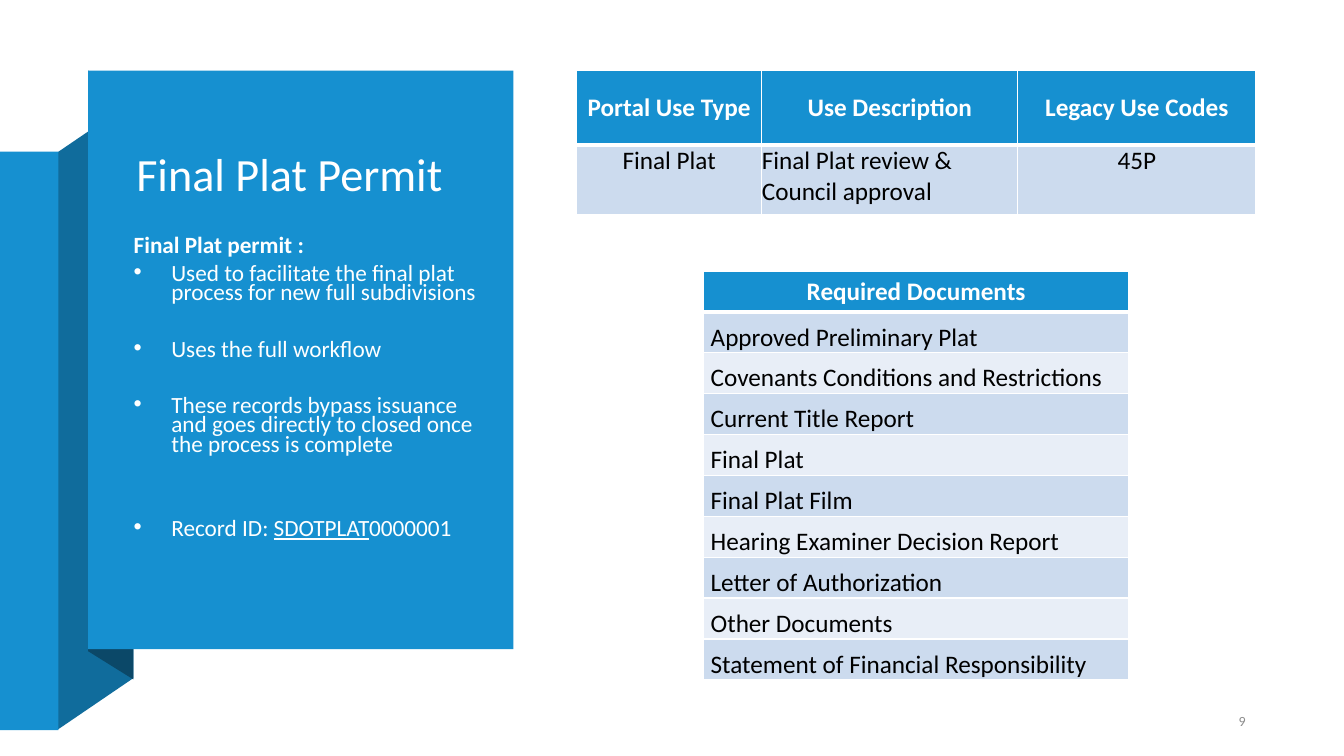
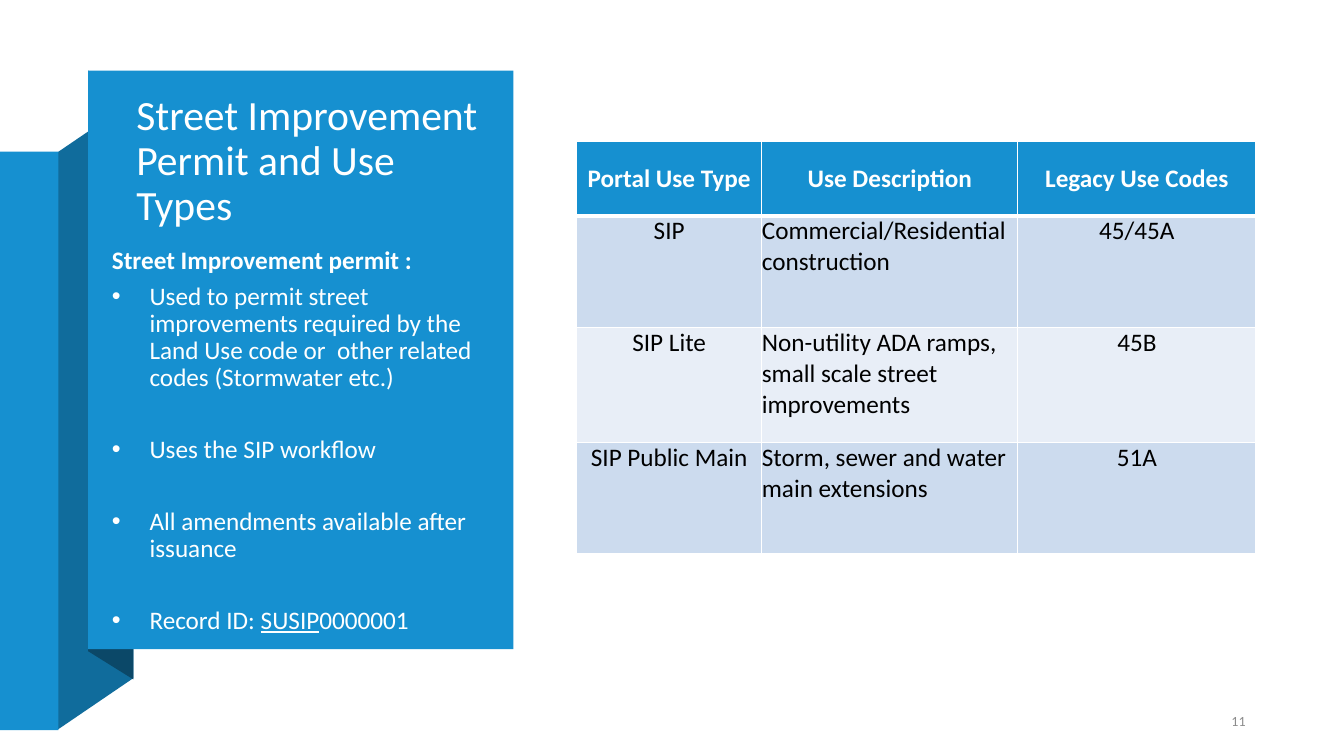
from dataclasses import dataclass
from typing import NamedTuple

from lxml import etree
from pptx import Presentation
from pptx.dml.color import RGBColor
from pptx.enum.shapes import MSO_SHAPE
from pptx.enum.text import MSO_ANCHOR, MSO_AUTO_SIZE, PP_ALIGN
from pptx.oxml.ns import qn
from pptx.util import Cm, Pt

RECTANGLE = MSO_SHAPE.RECTANGLE
TOP, MIDDLE, BOTTOM = MSO_ANCHOR.TOP, MSO_ANCHOR.MIDDLE, MSO_ANCHOR.BOTTOM
LEFT, CENTER, RIGHT = PP_ALIGN.LEFT, PP_ALIGN.CENTER, PP_ALIGN.RIGHT
NO_AUTOFIT = MSO_AUTO_SIZE.NONE
TITLE_ONLY = 5


@dataclass(frozen=True)
class Theme:
    """Colours, font and type sizes of the deck."""
    font: str = "Calibri"
    blue: str = "1690D0"
    fold: str = "106C9C"
    fold_shadow: str = "0B4868"
    white: str = "FFFFFF"
    body: str = "FEFFFF"
    black: str = "000000"
    gray: str = "8C8C8C"
    bands: tuple = ("CCDBEE", "E8EEF7")
    table_size: float = 18
    number_size: float = 10
    paragraph_gap: float = 6
    line_height: float = 1.22


class Box(NamedTuple):
    """A region in centimetres."""
    left: float
    top: float
    width: float
    height: float


class Bullet(NamedTuple):
    """A bullet, its underlined and closing parts, and the blank lines above it."""
    text: str
    underlined: str = ""
    ending: str = ""
    blank_lines: int = 1


THEME = Theme()
PANEL = Box(2.22, 1.78, 10.72, 14.58)
NUMBER_BOX = Box(29.74, 17.73, 1.9, 0.89)
USE_LEFT = 14.53
USE_COLUMNS = (4.67, 6.45, 6)
USE_HEADER_HEIGHT = 1.88
USE_HEADER = ("Portal Use Type", "Use Description", "Legacy Use Codes")
USE_ALIGNMENTS = (CENTER, LEFT, CENTER)
DOCUMENT_ROW_HEIGHT = 1.03


def to_lengths(box):
    """Turn a box into slide lengths."""
    return [Cm(value) for value in box]


def add_run(paragraph, text, size, color, bold=False, underline=False):
    """Add one formatted run."""
    run = paragraph.add_run()
    run.text = text
    font = run.font
    font.name, font.size, font.bold = THEME.font, Pt(size), bold
    font.color.rgb = RGBColor.from_string(color)
    if underline:
        font.underline = True


def paint(shape, color):
    """Give a shape a plain fill without line or shadow."""
    shape.shadow.inherit = False
    shape.fill.solid()
    shape.fill.fore_color.rgb = RGBColor.from_string(color)
    shape.line.fill.background()


def add_rectangle(slide, box, color):
    """Add a plain rectangle."""
    paint(slide.shapes.add_shape(RECTANGLE, *to_lengths(box)), color)


def add_outline(slide, box, points, color):
    """Add a filled outline whose points are relative to the box."""
    corners = [(Cm(box.left + x), Cm(box.top + y)) for x, y in points]
    builder = slide.shapes.build_freeform(*corners[0], scale=1.0)
    builder.add_line_segments(corners[1:], close=True)
    paint(builder.convert_to_shape(), color)


def add_ribbon(slide, box):
    """Draw the panel with the ribbon folded behind it."""
    fold_right = 1.14
    strip = Box(0, box.top + 2.04, 1.47, box.height)
    add_outline(slide, box, [(-0.77, 16.61), (fold_right, 15.31),
                             (fold_right, 0.76), (-0.77, 2.06)], THEME.fold)
    add_rectangle(slide, strip, THEME.blue)
    add_outline(slide, box, [(0, 14.63), (fold_right, 15.34),
                             (fold_right, 0.73), (0, 0)], THEME.fold_shadow)
    add_rectangle(slide, box, THEME.blue)


def place_title(slide, box, text, size):
    """Move the title onto the panel and format it."""
    title = slide.shapes.title
    title._element.getparent().append(title._element)
    title.left, title.top, title.width, title.height = to_lengths(box)
    frame = title.text_frame
    frame.auto_size, frame.vertical_anchor = NO_AUTOFIT, MIDDLE
    paragraph = frame.paragraphs[0]
    paragraph.alignment, paragraph.line_spacing = LEFT, 0.9
    add_run(paragraph, text, size, THEME.white)


def add_text_box(slide, box):
    """Add a wrapping text box and return its frame."""
    frame = slide.shapes.add_textbox(*to_lengths(box)).text_frame
    frame.word_wrap = True
    return frame


def add_description(slide, box, heading, bullets, size, spacing):
    """Write a bold heading and bullets spaced by whole lines."""
    frame = add_text_box(slide, box)
    first = frame.paragraphs[0]
    first.line_spacing = spacing
    add_run(first, heading, size, THEME.body, bold=True)
    gap = THEME.paragraph_gap
    pitch = size * THEME.line_height * spacing + gap
    for bullet in bullets:
        paragraph = frame.add_paragraph()
        properties = paragraph._p.get_or_add_pPr()
        properties.set("marL", str(Cm(0.95)))
        properties.set("indent", str(-Cm(0.95)))
        etree.SubElement(properties, qn("a:buFont"), typeface="Arial")
        etree.SubElement(properties, qn("a:buChar"), char="•")
        paragraph.line_spacing = spacing
        paragraph.space_before = Pt(round(gap + bullet.blank_lines * pitch, 1))
        add_run(paragraph, bullet.text, size, THEME.body)
        if bullet.underlined:
            add_run(paragraph, bullet.underlined, size, THEME.body, underline=True)
            add_run(paragraph, bullet.ending, size, THEME.body)


def add_number(slide, box, number):
    """Write the slide number."""
    frame = add_text_box(slide, box)
    frame.vertical_anchor = MIDDLE
    paragraph = frame.paragraphs[0]
    paragraph.alignment = RIGHT
    paragraph.space_after = Pt(6)
    add_run(paragraph, str(number), THEME.number_size, THEME.gray)


def set_borders(cell, top, bottom):
    """Draw white cell borders with the given top and bottom widths."""
    properties = cell._tc.get_or_add_tcPr()
    for side, width in (("L", 1), ("R", 1), ("T", top), ("B", bottom)):
        line = etree.SubElement(properties, qn(f"a:ln{side}"), w=str(Pt(width)))
        fill = etree.SubElement(line, qn("a:solidFill"))
        etree.SubElement(fill, qn("a:srgbClr"), val=THEME.white)


def fill_cell(cell, row, text, alignment, anchor, inset):
    """Write and format one cell; row 0 is the header."""
    header = row == 0
    set_borders(cell, 3 if row == 1 else 1, 3 if header else 1)
    cell.fill.solid()
    color = THEME.blue if header else THEME.bands[(row - 1) % 2]
    cell.fill.fore_color.rgb = RGBColor.from_string(color)
    cell.margin_left = cell.margin_right = Cm(inset)
    cell.margin_top = cell.margin_bottom = 0
    cell.vertical_anchor = MIDDLE if header else anchor
    paragraph = cell.text_frame.paragraphs[0]
    paragraph.alignment = CENTER if header else alignment
    add_run(paragraph, text, THEME.table_size,
            THEME.white if header else THEME.black, bold=header)


def add_banded_table(slide, left, top, widths, heights, rows, alignments,
                     anchor=TOP, inset=0):
    """Add a table with a blue header and banded rows."""
    box = Box(left, top, sum(widths), sum(heights))
    table = slide.shapes.add_table(len(rows), len(widths), *to_lengths(box)).table
    table.horz_banding = False
    for column, width in zip(table.columns, widths):
        column.width = Cm(width)
    for index, (height, texts) in enumerate(zip(heights, rows)):
        table.rows[index].height = Cm(height)
        for column, (text, alignment) in enumerate(zip(texts, alignments)):
            fill_cell(table.cell(index, column), index, text, alignment, anchor, inset)


def add_use_table(slide, top, heights, rows):
    """Add the table of use types and codes."""
    add_banded_table(slide, USE_LEFT, top, USE_COLUMNS, (USE_HEADER_HEIGHT, *heights),
                     (USE_HEADER, *rows), USE_ALIGNMENTS)


def add_document_table(slide, left, top, width, documents):
    """Add the one-column list of required documents."""
    rows = [(text,) for text in ("Required Documents", *documents)]
    add_banded_table(slide, left, top, (width,), [DOCUMENT_ROW_HEIGHT] * len(rows),
                     rows, (LEFT,), BOTTOM, 0.18)


def add_permit_slide(presentation, title, title_top, title_size, number):
    """Add a slide with ribbon, title and number."""
    slide = presentation.slides.add_slide(presentation.slide_layouts[TITLE_ONLY])
    add_ribbon(slide, PANEL)
    title_box = Box(PANEL.left + 0.96, PANEL.top + title_top, 9.22, 4.09)
    place_title(slide, title_box, title, title_size)
    add_number(slide, NUMBER_BOX, number)
    return slide


def build_final_plat(presentation):
    """Build the final plat slide."""
    slide = add_permit_slide(presentation, "Final Plat Permit", 0.63, 33, 9)
    bullets = (
        Bullet("Used to facilitate the final plat process for new full subdivisions",
               blank_lines=0),
        Bullet("Uses the full workflow"),
        Bullet("These records bypass issuance and goes directly to closed once "
               "the process is complete"),
        Bullet("Record ID: ", "SDOTPLAT", "0000001", blank_lines=2),
    )
    add_description(slide, Box(3.12, 5.87, 9.22, 8.66), "Final Plat permit :",
                    bullets, 16.6, 0.7)
    add_use_table(slide, PANEL.top, (1.75,),
                  [("Final Plat", "Final Plat review & Council approval", "45P")])
    add_document_table(slide, 17.73, 6.83, 10.72, (
        "Approved Preliminary Plat", "Covenants Conditions and Restrictions",
        "Current Title Report", "Final Plat", "Final Plat Film",
        "Hearing Examiner Decision Report", "Letter of Authorization",
        "Other Documents", "Statement of Financial Responsibility"))


def build_street_improvement(presentation):
    """Build the street improvement slide."""
    slide = add_permit_slide(presentation, "Street Improvement Permit and Use Types",
                             0.25, 29.7, 11)
    bullets = (
        Bullet("Used to permit street improvements required by the Land Use code or  "
               "other related codes (Stormwater etc.)", blank_lines=0),
        Bullet("Uses the SIP workflow"),
        Bullet("All amendments available after issuance"),
        Bullet("Record ID: ", "SUSIP", "0000001"),
    )
    add_description(slide, Box(2.57, 6.12, 9.8, 10.26), "Street Improvement permit :",
                    bullets, 18, 0.9)
    add_use_table(slide, 3.56, (2.82, 2.9, 2.79), [
        ("SIP", "Commercial/Residential construction", "45/45A"),
        ("SIP Lite", "Non-utility ADA ramps, small scale street improvements", "45B"),
        ("SIP Public Main", "Storm, sewer and water main extensions", "51A")])


def main():
    """Build and save the presentation."""
    presentation = Presentation()
    presentation.slide_width, presentation.slide_height = Cm(33.87), Cm(19.05)
    build_final_plat(presentation)
    build_street_improvement(presentation)
    presentation.save("out.pptx")


if __name__ == "__main__":
    main()
